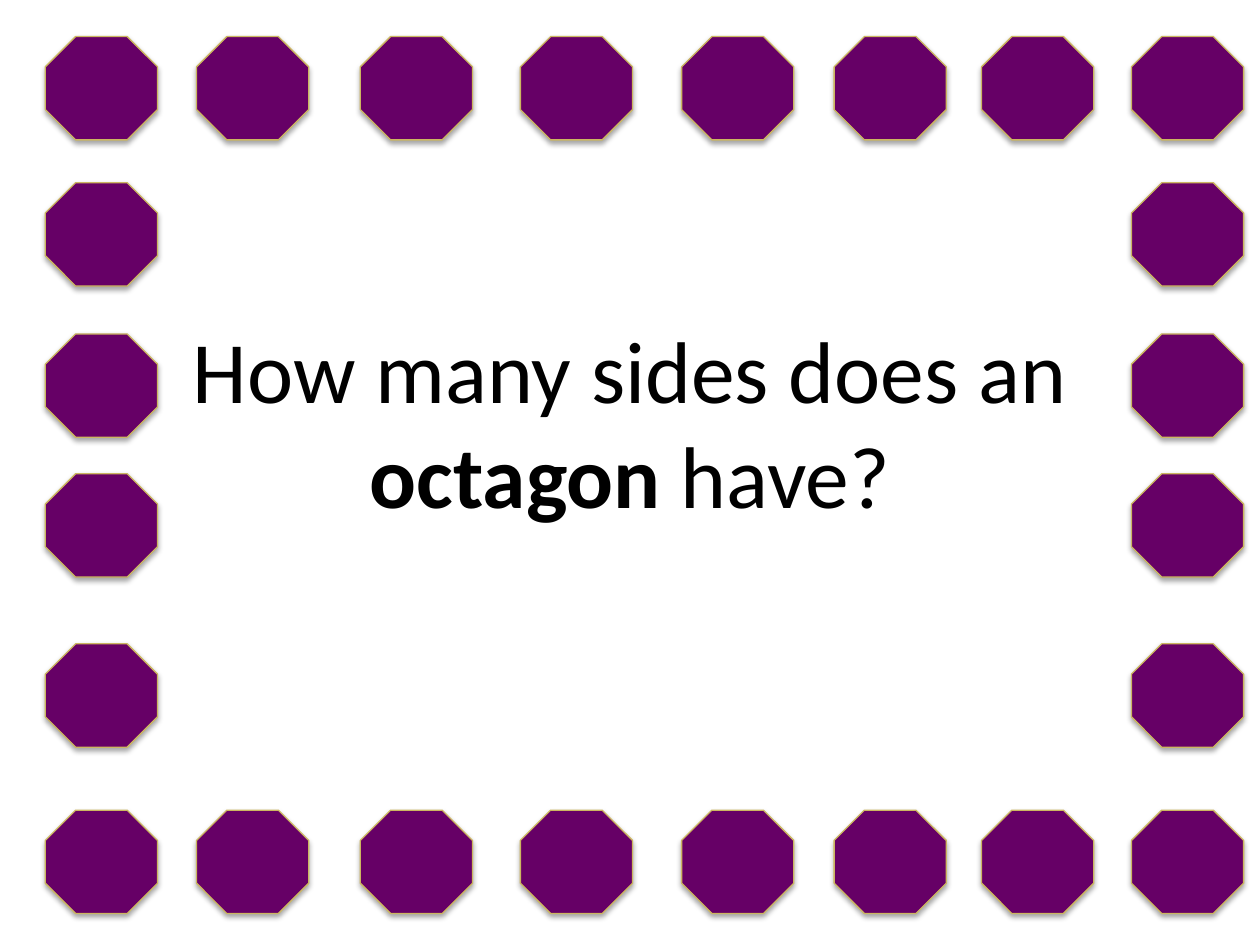
from dataclasses import dataclass
from itertools import product

from lxml import etree
from pptx import Presentation
from pptx.dml.color import RGBColor
from pptx.enum.shapes import MSO_SHAPE
from pptx.enum.text import MSO_ANCHOR, MSO_AUTO_SIZE, PP_ALIGN
from pptx.oxml.ns import qn
from pptx.slide import Slide
from pptx.util import Inches, Pt

OCTAGON = MSO_SHAPE.OCTAGON
MIDDLE = MSO_ANCHOR.MIDDLE
NO_FIT = MSO_AUTO_SIZE.NONE
CENTER = PP_ALIGN.CENTER


@dataclass(frozen=True)
class Theme:
    font: str = "Calibri"
    size: float = 50
    ink: str = "000000"
    fill: str = "660066"
    edge: str = "CCB661"
    line: float = 0.75
    shade: str = "000000"
    alpha: int = 35
    blur: float = 3.1
    drop: float = 1.8
    angle: int = 90


@dataclass(frozen=True)
class Tile:
    left: float
    top: float
    width: float = 0.89
    height: float = 0.82


@dataclass(frozen=True)
class Part:
    text: str
    bold: bool = False


THEME = Theme()
COLS = (0.36, 1.56, 2.86, 4.13, 5.41, 6.62, 7.79, 8.98)
ROWS = (0.29, 1.45, 2.65, 3.76, 5.11, 6.43)
BORDER = [
    Tile(x, y)
    for y, x in product(ROWS, COLS)
    if x in (COLS[0], COLS[-1]) or y in (ROWS[0], ROWS[-1])
]
QUESTION = (
    Part("How many sides does an "),
    Part("octagon ", True),
    Part("have?"),
)


def add_shade(shape) -> None:
    shape.shadow.inherit = False
    effects = shape.element.spPr.find(qn("a:effectLst"))
    outer = etree.SubElement(
        effects,
        qn("a:outerShdw"),
        blurRad=str(Pt(THEME.blur)),
        dist=str(Pt(THEME.drop)),
        dir=str(THEME.angle * 60000),
        rotWithShape="0",
    )
    color = etree.SubElement(outer, qn("a:srgbClr"), val=THEME.shade)
    etree.SubElement(color, qn("a:alpha"), val=str(THEME.alpha * 1000))


def draw_tile(slide: Slide, tile: Tile) -> None:
    shape = slide.shapes.add_shape(
        OCTAGON,
        Inches(tile.left),
        Inches(tile.top),
        Inches(tile.width),
        Inches(tile.height),
    )
    shape.fill.solid()
    shape.fill.fore_color.rgb = RGBColor.from_string(THEME.fill)
    shape.line.color.rgb = RGBColor.from_string(THEME.edge)
    shape.line.width = Pt(THEME.line)
    add_shade(shape)


def draw_title(slide: Slide, parts: tuple[Part, ...]) -> None:
    title = slide.shapes.title
    title.left, title.top = Inches(0.5), Inches(2.72)
    title.width, title.height = Inches(9), Inches(1.25)
    frame = title.text_frame
    frame.word_wrap = True
    frame.auto_size = NO_FIT
    frame.vertical_anchor = MIDDLE
    para = frame.paragraphs[0]
    para.alignment = CENTER
    for part in parts:
        run = para.add_run()
        run.text = part.text
        run.font.name = THEME.font
        run.font.size = Pt(THEME.size)
        run.font.bold = part.bold
        run.font.color.rgb = RGBColor.from_string(THEME.ink)


def main() -> None:
    deck = Presentation()
    deck.slide_width, deck.slide_height = Inches(10), Inches(7.5)
    slide = deck.slides.add_slide(deck.slide_layouts[5])
    draw_title(slide, QUESTION)
    for tile in BORDER:
        draw_tile(slide, tile)
    deck.save("out.pptx")


if __name__ == "__main__":
    main()
